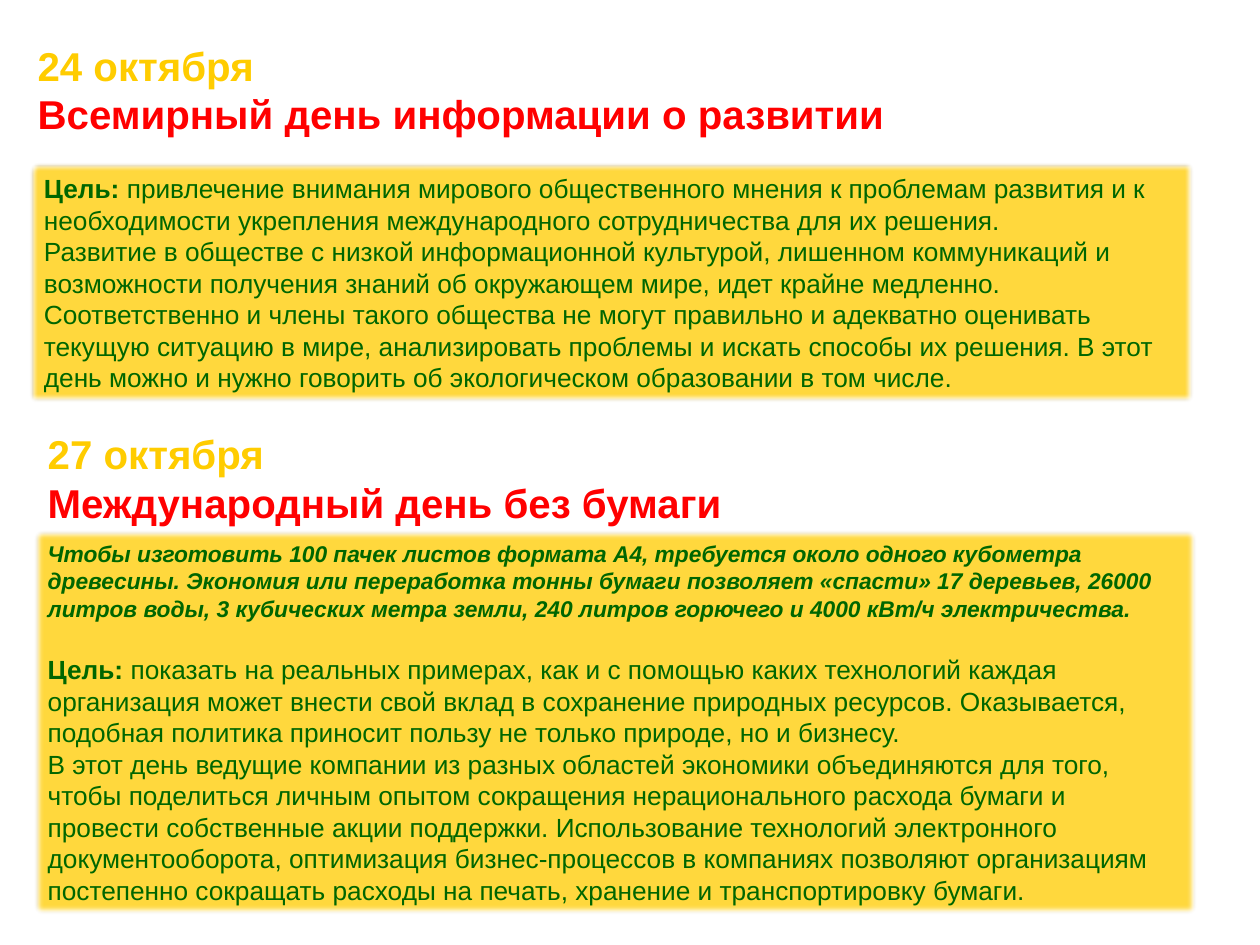
from lxml import etree
from pptx import Presentation
from pptx.dml.color import RGBColor
from pptx.enum.shapes import MSO_SHAPE
from pptx.enum.text import MSO_ANCHOR, PP_ALIGN
from pptx.oxml.ns import qn
from pptx.util import Inches, Pt

RECTANGLE = MSO_SHAPE.RECTANGLE
MIDDLE = MSO_ANCHOR.MIDDLE
LEFT = PP_ALIGN.LEFT
GOLD, RED, GREEN, BROWN = "FFCC00", "FF0000", "006600", "A88000"


def color(value):
    return RGBColor.from_string(value)


def add_span(para, text, size, hue, bold=False, italic=False):
    span = para.add_run()
    span.text = text
    span.font.name = "Arial"
    span.font.size = Pt(size)
    span.font.bold = bold
    span.font.italic = italic
    span.font.color.rgb = color(hue)


# Each paragraph: space before, then spans of (text, size, bold, italic)
GOAL = ("Цель: ", 15, True, False)
days = [
    {
        "heading": (0.2, 0.28, 6.93, 0.88),
        "date": "24 октября",
        "name": "Всемирный день информации о развитии",
        "panel": (0.25, 1.31, 9.21, 1.87),
        "paragraphs": [
            (0, [GOAL, ("привлечение внимания мирового общественного мнения к проблемам развития и к "
                        "необходимости укрепления международного сотрудничества для их решения.", 15, False, False)]),
            (0, [("Развитие в обществе с низкой информационной культурой, лишенном коммуникаций и "
                  "возможности получения знаний об окружающем мире, идет крайне медленно. "
                  "Соответственно и члены такого общества не могут правильно и адекватно оценивать "
                  "текущую ситуацию в мире, анализировать проблемы и искать способы их решения. В этот "
                  "день можно и нужно говорить об экологическом образовании в том числе.", 15, False, False)]),
        ],
    },
    {
        "heading": (0.28, 3.36, 5.75, 0.88),
        "date": "27 октября",
        "name": "Международный день без бумаги",
        "panel": (0.28, 4.22, 9.21, 3.03),
        "paragraphs": [
            (0, [("Чтобы изготовить 100 пачек листов формата А4, требуется около одного кубометра "
                  "древесины. Экономия или переработка тонны бумаги позволяет «спасти» 17 деревьев, 26000 "
                  "литров воды, 3 кубических метра земли, 240 литров горючего и 4000 кВт/ч электричества.",
                  13, True, True)]),
            (18, [GOAL, ("показать на реальных примерах, как и с помощью каких технологий каждая "
                         "организация может внести свой вклад в сохранение природных ресурсов. Оказывается, "
                         "подобная политика приносит пользу не только природе, но и бизнесу.", 15, False, False)]),
            (0, [("В этот день ведущие компании из разных областей экономики объединяются для того, "
                  "чтобы поделиться личным опытом сокращения нерационального расхода бумаги и "
                  "провести собственные акции поддержки. Использование технологий электронного "
                  "документооборота, оптимизация бизнес-процессов в компаниях позволяют организациям "
                  "постепенно сокращать расходы на печать, хранение и транспортировку бумаги.", 15, False, False)]),
        ],
    },
]

deck = Presentation()
deck.slide_width, deck.slide_height = Inches(10), Inches(7.5)
page = deck.slides.add_slide(deck.slide_layouts[6])

for day in days:
    heading = page.shapes.add_textbox(*map(Inches, day["heading"])).text_frame
    heading.word_wrap = False
    add_span(heading.paragraphs[0], day["date"], 23, GOLD, bold=True)
    add_span(heading.add_paragraph(), day["name"], 23, RED, bold=True)

    panel = page.shapes.add_shape(RECTANGLE, *map(Inches, day["panel"]))
    panel.shadow.inherit = False
    panel.fill.solid()
    panel.fill.fore_color.rgb = color(GOLD)
    fill = panel._element.spPr.find(qn("a:solidFill"))
    etree.SubElement(fill[0], qn("a:alpha"), val="76000")
    panel.line.color.rgb = color(BROWN)
    panel.line.width = Pt(2.25)
    effects = panel._element.spPr.find(qn("a:effectLst"))
    etree.SubElement(effects, qn("a:softEdge"), rad="31750")

    body = panel.text_frame
    body.word_wrap = True
    body.vertical_anchor = MIDDLE
    for index, (space, spans) in enumerate(day["paragraphs"]):
        para = body.add_paragraph() if index else body.paragraphs[0]
        para.alignment = LEFT
        if space:
            para.space_before = Pt(space)
        for text, size, bold, italic in spans:
            add_span(para, text, size, GREEN, bold, italic)

deck.save("out.pptx")
